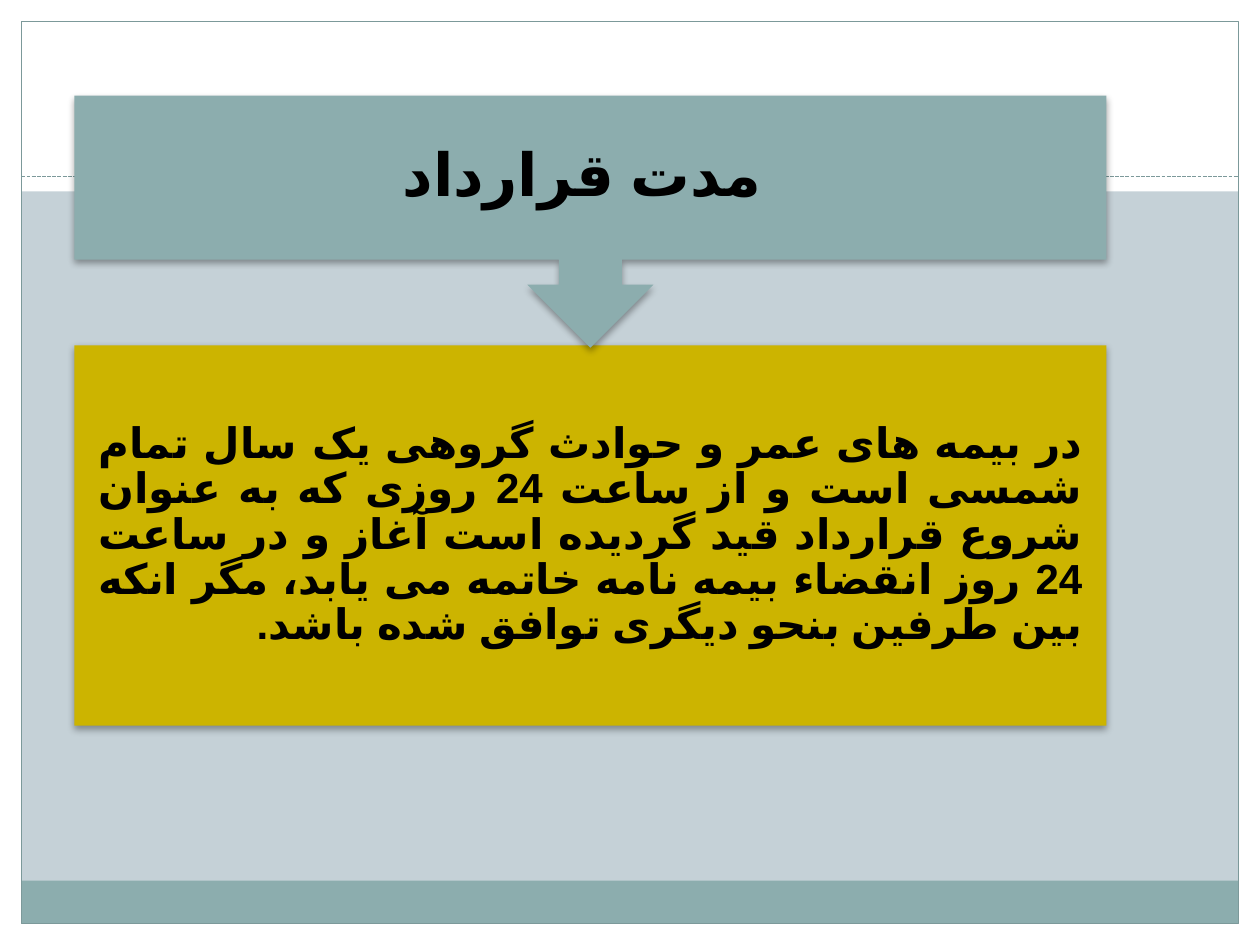
"""Build a slide with a titled callout pointing down to a contract-duration box."""
from dataclasses import dataclass
from typing import Optional

from lxml.etree import SubElement
from pptx import Presentation
from pptx.dml.color import RGBColor
from pptx.enum.dml import MSO_LINE
from pptx.enum.shapes import MSO_CONNECTOR, MSO_SHAPE
from pptx.enum.text import MSO_ANCHOR, PP_ALIGN
from pptx.oxml.ns import qn
from pptx.util import Inches, Pt

WIDTH, HEIGHT = 10, 7.5
MARGIN = 0.17
BAND_TOP, HEADER_BOTTOM, RULE_Y = 6.99, 1.52, 1.4
LEFT, BOX_WIDTH = 0.59, 8.19
CALLOUT_TOP, CALLOUT_HEIGHT, TITLE_SHARE = 0.76, 2, 0.65
BODY_TOP, BODY_HEIGHT = 2.74, 3.02
FONT, ARABIC_FONT = "Cambria", "Arial"
COLORS = {
    "background": "C5D1D7",
    "paper": "FFFFFF",
    "teal": "8CADAE",
    "rule": "7C999A",
    "gold": "CCB400",
    "ink": "000000",
}
TITLE = "مدت قرارداد "
BODY = (
    "در بیمه های عمر و حوادث گروهی یک سال تمام شمسی است و از ساعت 24 روزی "
    "که به عنوان شروع قرارداد قید گردیده است آغاز و در ساعت 24 روز انقضاء "
    "بیمه نامه خاتمه می یابد، مگر انکه بین طرفین بنحو دیگری توافق شده باشد. "
)


@dataclass
class Block:
    left: float
    top: float
    width: float
    height: float
    fill: Optional[str] = None
    line: Optional[str] = None
    kind: MSO_SHAPE = MSO_SHAPE.RECTANGLE
    shadow: bool = False

    @property
    def box(self) -> tuple:
        return tuple(Inches(v) for v in (self.left, self.top, self.width, self.height))


def rgb(name: str) -> RGBColor:
    return RGBColor.from_string(COLORS[name])


def add_shadow(sp) -> None:
    effects = sp._element.spPr.find(qn("a:effectLst"))
    outer = SubElement(effects, qn("a:outerShdw"), blurRad=str(Pt(4)), dist=str(Pt(2)),
                       dir="5400000", rotWithShape="0")
    color = SubElement(outer, qn("a:srgbClr"), val=COLORS["ink"])
    SubElement(color, qn("a:alpha"), val="35000")


def draw_block(s, block: Block):
    sp = s.shapes.add_shape(block.kind, *block.box)
    sp.shadow.inherit = False
    if block.fill:
        sp.fill.solid()
        sp.fill.fore_color.rgb = rgb(block.fill)
    else:
        sp.fill.background()
    if block.line:
        sp.line.color.rgb = rgb(block.line)
        sp.line.width = Pt(0.75)
    else:
        sp.line.fill.background()
    if block.shadow:
        add_shadow(sp)
    return sp


def draw_rule(s) -> None:
    rule = s.shapes.add_connector(MSO_CONNECTOR.STRAIGHT, Inches(MARGIN), Inches(RULE_Y),
                                  Inches(WIDTH - MARGIN), Inches(RULE_Y))
    rule.line.color.rgb = rgb("rule")
    rule.line.width = Pt(0.75)
    rule.line.dash_style = MSO_LINE.SQUARE_DOT
    SubElement(rule._element.spPr, qn("a:effectLst"))


def write(sp, text: str, size: int, inset: float, align: PP_ALIGN, rtl: bool = False) -> None:
    tf = sp.text_frame
    tf.word_wrap = True
    tf.vertical_anchor = MSO_ANCHOR.MIDDLE
    tf.margin_left = tf.margin_right = tf.margin_top = tf.margin_bottom = Inches(inset)
    tf.text = text
    p = tf.paragraphs[0]
    p.alignment = align
    p.line_spacing = 0.9
    if rtl:
        p._p.get_or_add_pPr().set("rtl", "1")
    r = p.runs[0]
    r.font.name = FONT
    r.font.size = Pt(size)
    r.font.bold = True
    r.font.color.rgb = rgb("ink")
    r_pr = r._r.get_or_add_rPr()
    r_pr.set("lang", "fa-IR")
    SubElement(r_pr, qn("a:cs"), typeface=ARABIC_FONT)


def main() -> None:
    prs = Presentation()
    prs.slide_width, prs.slide_height = Inches(WIDTH), Inches(HEIGHT)
    s = prs.slides.add_slide(prs.slide_layouts[6])
    s.background.fill.solid()
    s.background.fill.fore_color.rgb = rgb("background")

    inner_width, inner_bottom = WIDTH - 2 * MARGIN, HEIGHT - MARGIN
    for block in (
        Block(0, inner_bottom, WIDTH, MARGIN, "paper"),
        Block(0, 0, WIDTH, HEADER_BOTTOM, "paper"),
        Block(0, 0, MARGIN, HEIGHT, "paper"),
        Block(WIDTH - MARGIN, 0, MARGIN, HEIGHT, "paper"),
        Block(MARGIN, BAND_TOP, inner_width, inner_bottom - BAND_TOP, "teal"),
        Block(MARGIN, MARGIN, inner_width, HEIGHT - 2 * MARGIN, line="rule"),
    ):
        draw_block(s, block)
    draw_rule(s)

    body = draw_block(s, Block(LEFT, BODY_TOP, BOX_WIDTH, BODY_HEIGHT, "gold", shadow=True))
    write(body, BODY, 24, 0.19, PP_ALIGN.JUSTIFY, rtl=True)

    callout = draw_block(s, Block(LEFT, CALLOUT_TOP, BOX_WIDTH, CALLOUT_HEIGHT, "teal",
                                  kind=MSO_SHAPE.UP_ARROW_CALLOUT, shadow=True))
    callout.rotation = 180
    callout.adjustments[3] = TITLE_SHARE
    title = Block(LEFT, CALLOUT_TOP, BOX_WIDTH, CALLOUT_HEIGHT * TITLE_SHARE)
    write(s.shapes.add_textbox(*title.box), TITLE, 34, 0.26, PP_ALIGN.CENTER)

    prs.save("out.pptx")


if __name__ == "__main__":
    main()
